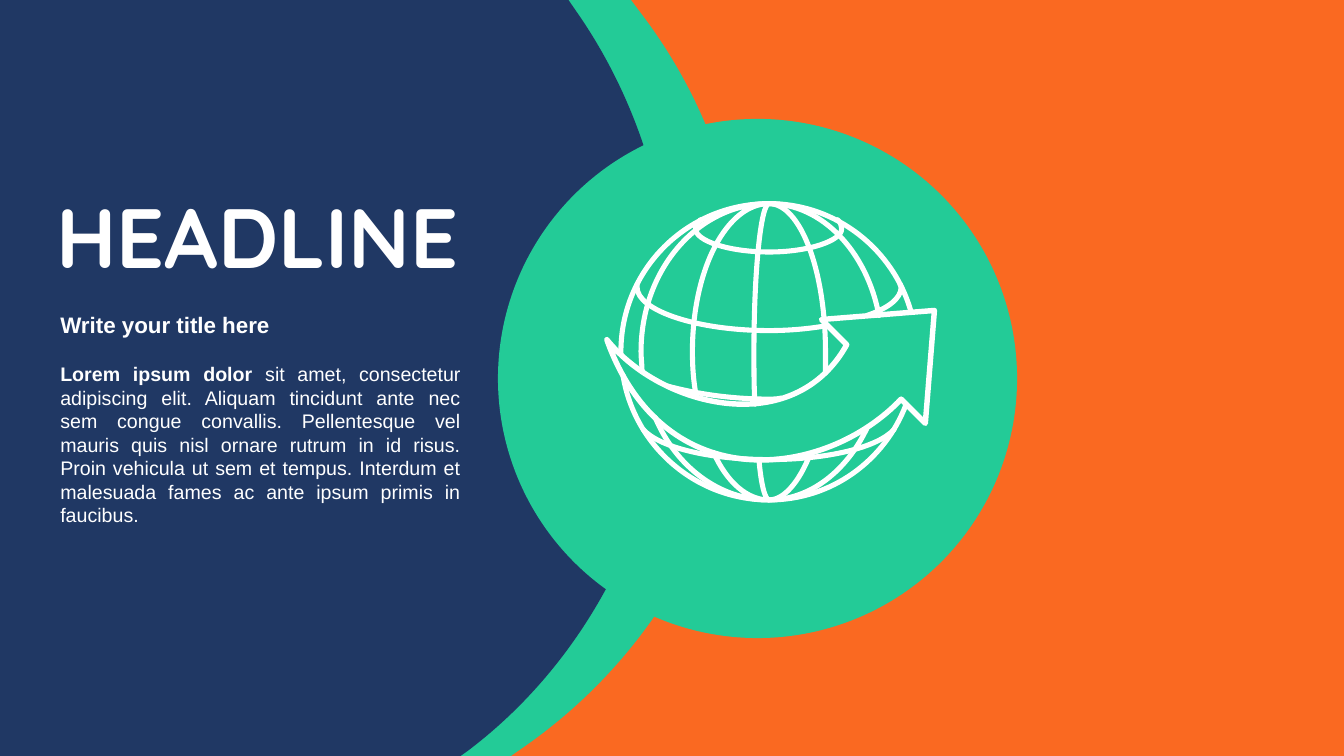
"""Build a headline slide with curved colour panels and a globe wrapped by an arrow."""
import pptx
import pptx.dml.color
import pptx.enum.shapes
import pptx.enum.text
import pptx.oxml.ns
import pptx.util
from lxml import etree

Inches = pptx.util.Inches
Pt = pptx.util.Pt
qn = pptx.oxml.ns.qn

WIDTH, HEIGHT = 40 / 3, 7.5
ORANGE, GREEN, NAVY, WHITE = "FA6921", "23CB97", "203864", "FFFFFF"

HEADLINE = "HEADLINE"
SUBTITLE = "Write your title here"
BODY_LEAD = "Lorem ipsum dolor "
BODY = ("sit amet, consectetur adipiscing elit. Aliquam tincidunt ante nec sem congue "
        "convallis. Pellentesque vel mauris quis nisl ornare rutrum in id risus. Proin "
        "vehicula ut sem et tempus. Interdum et malesuada fames ac ante ipsum primis in "
        "faucibus.")

# Each path lists its steps: a pair is a point, six numbers are a Bézier curve.
PANELS = [
    (GREEN, [(0, 0), (6.26, 0), (6.38, 0.16), (7.02, 1.01, 7.4, 2.07, 7.4, 3.21),
             (7.4, 4.98, 6.5, 6.53, 5.14, 7.45), (5.07, 7.5), (0, 7.5)]),
    (NAVY, [(0, 0), (5.64, 0), (5.75, 0.16), (6.33, 1.01, 6.67, 2.07, 6.67, 3.21),
            (6.67, 4.98, 5.86, 6.53, 4.64, 7.45), (4.57, 7.5), (0, 7.5)]),
]
ARROW = [(8.4, 3.42), (8.15, 3.17), (9.27, 3.08), (9.18, 4.2), (8.94, 3.96),
         (8.19, 4.75, 6.59, 4.96, 6.02, 3.37), (6.57, 4.05, 7.88, 4.36, 8.4, 3.42)]
GLOBE = [
    [(8.99, 4.01), (8.78, 4.57, 8.25, 4.96, 7.63, 4.96), (6.9, 4.96, 6.29, 4.42, 6.18, 3.72)],
    [(6.16, 3.51), (6.16, 3.51, 6.16, 3.49, 6.16, 3.49), (6.16, 2.67, 6.82, 2.02, 7.63, 2.02),
     (8.3, 2.02, 8.87, 2.48, 9.04, 3.1)],
    [(8.72, 3.13), (8.6, 2.49, 8.15, 2.02, 7.63, 2.02), (7.55, 2.02, 7.48, 2.68, 7.48, 3.49),
     (7.48, 3.66, 7.48, 3.84, 7.49, 4.01)],
    [(8.93, 2.82), (8.93, 2.83, 8.94, 2.84, 8.94, 2.85), (8.94, 2.96, 8.81, 3.06, 8.6, 3.13)],
    [(8.21, 3.23), (8.04, 3.26, 7.84, 3.28, 7.63, 3.28), (6.91, 3.28, 6.32, 3.08, 6.32, 2.85),
     (6.32, 2.84, 6.32, 2.83, 6.32, 2.82)],
    [(8.31, 2.18), (8.34, 2.21, 8.35, 2.24, 8.35, 2.27), (8.35, 2.39, 8.02, 2.5, 7.63, 2.5),
     (7.23, 2.5, 6.9, 2.39, 6.9, 2.27), (6.9, 2.24, 6.92, 2.21, 6.95, 2.18)],
    [(8.87, 4.26), (8.71, 4.44, 8.21, 4.56, 7.63, 4.56), (7.04, 4.56, 6.54, 4.44, 6.38, 4.26)],
    [(7.08, 4.49), (7.21, 4.78, 7.41, 4.96, 7.63, 4.96), (7.13, 4.96, 6.7, 4.62, 6.5, 4.14)],
    [(6.91, 3.94), (6.88, 3.79, 6.87, 3.64, 6.87, 3.49), (6.87, 2.67, 7.21, 2.02, 7.63, 2.02),
     (6.93, 2.02, 6.36, 2.67, 6.36, 3.49), (6.36, 3.55, 6.37, 3.62, 6.37, 3.68)],
    [(6.62, 3.83), (6.88, 3.9, 7.23, 3.96, 7.63, 3.96), (7.67, 3.96, 7.71, 3.96, 7.75, 3.95)],
    [(7.53, 4.56), (7.55, 4.8, 7.59, 4.96, 7.63, 4.96), (8.04, 4.96, 8.4, 4.67, 8.6, 4.25)],
    [(7.63, 2.02), (7.94, 2.02, 8.19, 2.68, 8.19, 3.49), (8.19, 3.56, 8.19, 3.63, 8.19, 3.7)],
    [(6.16, 3.51), (6.16, 3.51, 6.16, 3.49, 6.16, 3.49)],
    [(8.04, 4.5), (7.93, 4.78, 7.78, 4.96, 7.63, 4.96)],
]


def rgb(color):
    return pptx.dml.color.RGBColor.from_string(color)


def fill_shape(sp, color):
    sp.shadow.inherit = False
    sp.fill.solid()
    sp.fill.fore_color.rgb = rgb(color)
    sp.line.fill.background()


def outline_shape(sp, width):
    sp.shadow.inherit = False
    sp.fill.background()
    sp.line.color.rgb = rgb(WHITE)
    sp.line.width = Pt(width)
    ln = sp.element.spPr.find(qn("a:ln"))
    ln.set("cap", "rnd")
    etree.SubElement(ln, qn("a:round"))


def add_path(shapes, steps, close):
    points = [(Inches(step[i]), Inches(step[i + 1]))
              for step in steps for i in range(0, len(step), 2)]
    builder = shapes.build_freeform(*points[0])
    builder.add_line_segments(points[1:], close=close)
    sp = builder.convert_to_shape()
    outline = next(sp.element.iter(qn("a:path")))
    segments = iter(outline.findall(qn("a:lnTo")))
    for step in steps[1:]:
        parts = [next(segments) for _ in range(len(step) // 2)]
        if len(parts) == 3:
            curve = etree.SubElement(outline, qn("a:cubicBezTo"))
            parts[0].addprevious(curve)
            for part in parts:
                curve.append(part[0])
                outline.remove(part)
    return sp


def add_text_frame(shapes, left, top, width, height):
    tf = shapes.add_textbox(Inches(left), Inches(top), Inches(width), Inches(height)).text_frame
    tf.word_wrap = True
    tf.auto_size = pptx.enum.text.MSO_AUTO_SIZE.SHAPE_TO_FIT_TEXT
    return tf


def style(p, font, size, bold=None):
    p.font.name = font
    p.font.size = Pt(size)
    p.font.bold = bold
    p.font.color.rgb = rgb(WHITE)


def main():
    prs = pptx.Presentation()
    prs.slide_width, prs.slide_height = Inches(WIDTH), Inches(HEIGHT)
    shapes = prs.slides.add_slide(prs.slide_layouts[6]).shapes
    kinds = pptx.enum.shapes.MSO_SHAPE

    fill_shape(shapes.add_shape(kinds.RECTANGLE, 0, 0, prs.slide_width, prs.slide_height), ORANGE)
    for color, steps in PANELS:
        fill_shape(add_path(shapes, steps, True), color)
    disc = shapes.add_shape(kinds.OVAL, Inches(4.94), Inches(1.18), Inches(5.15), Inches(5.15))
    fill_shape(disc, GREEN)

    tf = add_text_frame(shapes, 0.5, 3.04, 4.17, 2.49)
    subtitle, body = tf.paragraphs[0], tf.add_paragraph()
    subtitle.text = SUBTITLE
    style(subtitle, "Arial", 16, True)
    for text, bold in ((BODY_LEAD, True), (BODY, False)):
        r = body.add_run()
        r.text = text
        r.font.bold = bold
    style(body, "Arial", 14)
    body.space_before = Pt(17)
    for p in tf.paragraphs:
        p.alignment = pptx.enum.text.PP_ALIGN.JUSTIFY

    p = add_text_frame(shapes, 0.46, 1.78, 5.59, 1.11).paragraphs[0]
    p.text = HEADLINE
    style(p, "Quicksand", 60, True)

    icon = shapes.add_group_shape().shapes
    outline_shape(add_path(icon, ARROW, True), 3.88)
    for steps in GLOBE:
        outline_shape(add_path(icon, steps, False), 3.63)

    prs.save("out.pptx")


if __name__ == "__main__":
    main()
